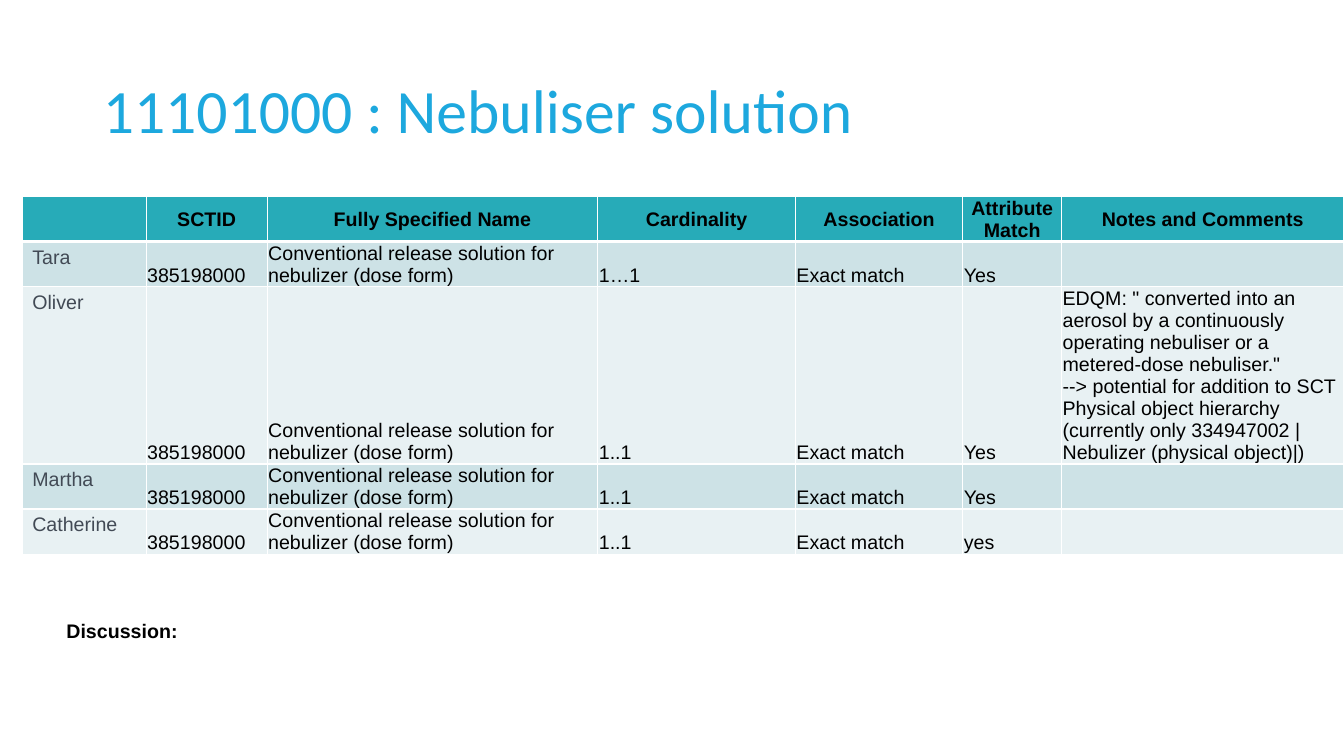
from dataclasses import dataclass

from lxml import etree
from pptx import Presentation
from pptx import util as u
from pptx.dml.color import RGBColor
from pptx.enum import text
from pptx.oxml.ns import qn


@dataclass(frozen=True)
class Theme:
    title: str = "1DA8DE"
    ink: str = "000000"
    name: str = "424A55"
    header: str = "27ABB8"
    bands: tuple = ("CDE2E6", "E8F1F3")
    border: str = "FFFFFF"
    title_font: str = "Calibri"
    body_font: str = "Arial"
    title_size: int = 44
    body_size: int = 14


@dataclass(frozen=True)
class Review:
    reviewer: str
    cardinality: str = "1..1"
    match: str = "Yes"
    notes: str = ""

    def cells(self) -> list[str]:
        return [self.reviewer, "385198000",
                "Conventional release solution for nebulizer (dose form)",
                self.cardinality, "Exact match", self.match, self.notes]


THEME = Theme()
HEADINGS = ["", "SCTID", "Fully Specified Name", "Cardinality",
            "Association", "Attribute Match", "Notes and Comments"]
REVIEWS = [
    Review("Tara", cardinality="1…1"),
    Review("Oliver", notes=(
        'EDQM: " converted into an aerosol by a continuously operating '
        'nebuliser or a metered-dose nebuliser." \n'
        "--> potential for addition to SCT Physical object hierarchy "
        "(currently only 334947002 |Nebulizer (physical object)|)")),
    Review("Martha"),
    Review("Catherine", match="yes"),
]
COLUMN_WIDTHS = [1.23, 1.2, 3.28, 1.96, 1.66, 0.98, 2.8]
ROW_HEIGHTS = [0.42, 0.4, 0.42, 0.42, 0.42]
TIGHT = dict(margin_left=u.Inches(0.01), margin_right=u.Inches(0.01),
             margin_top=u.Inches(0.01), margin_bottom=0)


def apply(target, formats: dict) -> None:
    for key, value in formats.items():
        setattr(target, key, value)


def write(p, content: str, color: str, size: int = THEME.body_size,
          font: str = THEME.body_font, bold: bool = False) -> None:
    """Fill a paragraph, keeping line breaks at the size of the text."""
    for i, line in enumerate(content.split("\n")):
        if i:
            p.add_line_break()
        r = p.add_run()
        r.text = line
        apply(r.font, dict(name=font, size=u.Pt(size), bold=bold))
        r.font.color.rgb = RGBColor.from_string(color)
    for br in p._p.findall(qn("a:br")):
        etree.SubElement(br, qn("a:rPr"), sz=str(size * 100))


def set_borders(cell, bottom: int) -> None:
    tcPr = cell._tc.get_or_add_tcPr()
    for side, width in dict(L=1, R=1, T=1, B=bottom).items():
        ln = etree.SubElement(tcPr, qn(f"a:ln{side}"), w=str(u.Pt(width)))
        fill = etree.SubElement(ln, qn("a:solidFill"))
        etree.SubElement(fill, qn("a:srgbClr"), val=THEME.border)


def format_cell(cell, content: str, row: int, col: int) -> None:
    header = row == 0
    set_borders(cell, bottom=3 if header else 1)
    cell.fill.solid()
    cell.fill.fore_color.rgb = RGBColor.from_string(
        THEME.header if header else THEME.bands[(row - 1) % 2])
    if not content:
        return
    p = cell.text_frame.paragraphs[0]
    if header:
        p.alignment = text.PP_ALIGN.CENTER
    if col:
        anchor = text.MSO_ANCHOR.MIDDLE if header else text.MSO_ANCHOR.BOTTOM
        apply(cell, dict(TIGHT, vertical_anchor=anchor))
    write(p, content, THEME.ink if col else THEME.name, bold=header)


def add_title(s) -> None:
    sp = s.shapes.title
    apply(sp, dict(left=u.Inches(0.92), top=u.Inches(0.4),
                   width=u.Inches(11.5), height=u.Inches(1.45)))
    tf = sp.text_frame
    apply(tf, dict(vertical_anchor=text.MSO_ANCHOR.MIDDLE, word_wrap=True))
    p = tf.paragraphs[0]
    apply(p, dict(alignment=text.PP_ALIGN.LEFT, line_spacing=0.9))
    write(p, "11101000 : Nebuliser solution", THEME.title,
          THEME.title_size, THEME.title_font)


def add_review_table(s) -> None:
    rows = [HEADINGS] + [review.cells() for review in REVIEWS]
    table = s.shapes.add_table(
        len(rows), len(HEADINGS), u.Inches(0.22), u.Inches(1.95),
        u.Inches(sum(COLUMN_WIDTHS)), u.Inches(sum(ROW_HEIGHTS))).table
    for column, width in zip(table.columns, COLUMN_WIDTHS):
        column.width = u.Inches(width)
    for row, height in zip(table.rows, ROW_HEIGHTS):
        row.height = u.Inches(height)
    for i, contents in enumerate(rows):
        for j, content in enumerate(contents):
            format_cell(table.cell(i, j), content, i, j)


def add_discussion(s) -> None:
    sp = s.shapes.add_textbox(u.Inches(0.56), u.Inches(6.09),
                              u.Inches(11.85), u.Inches(0.57))
    tf = sp.text_frame
    tf.word_wrap = True
    write(tf.paragraphs[0], "Discussion:", THEME.ink, bold=True)


def main() -> None:
    prs = Presentation()
    apply(prs, dict(slide_width=u.Inches(13.33), slide_height=u.Inches(7.5)))
    s = prs.slides.add_slide(prs.slide_layouts.get_by_name("Title Only"))
    # Heading
    add_title(s)
    # Reviewers' mappings
    add_review_table(s)
    # Space for discussion
    add_discussion(s)
    prs.save("out.pptx")


if __name__ == "__main__":
    main()
